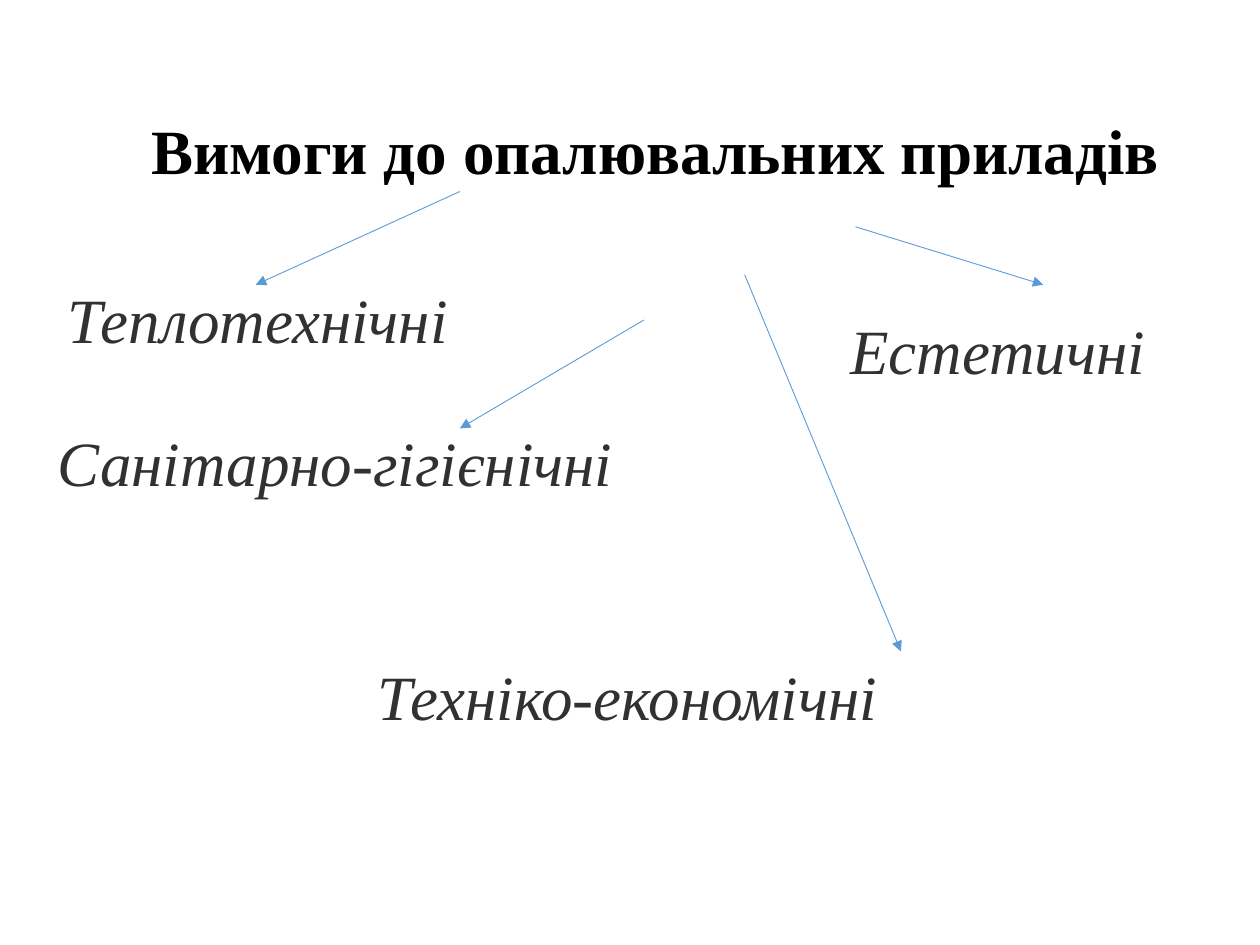
from typing import NamedTuple

import pptx
import pptx.dml.color
import pptx.enum.shapes
import pptx.enum.text
import pptx.oxml
import pptx.oxml.ns
import pptx.util
from pptx.util import Inches

BLACK = pptx.dml.color.RGBColor(0x00, 0x00, 0x00)
DARK_GREY = pptx.dml.color.RGBColor(0x31, 0x31, 0x31)
BLUE = pptx.dml.color.RGBColor(0x5B, 0x9B, 0xD5)
FONT = "Times New Roman"
TITLE_ONLY = 5
LABEL_HEIGHT = 0.71


class Requirement(NamedTuple):
    text: str
    left: float
    top: float
    width: float


class Arrow(NamedTuple):
    start: tuple[float, float]
    end: tuple[float, float]


REQUIREMENTS = [
    Requirement("Санітарно-гігієнічні", 0.36, 3.31, 4.65),
    Requirement("Теплотехнічні", 0.44, 2.18, 3.25),
    Requirement("Техніко-економічні", 2.9, 5.17, 4.21),
    Requirement("Естетичні", 6.65, 2.42, 2.57),
]
ARROWS = [
    Arrow((3.65, 1.52), (2.03, 2.26)),
    Arrow((5.11, 2.54), (3.65, 3.4)),
    Arrow((5.91, 2.18), (7.15, 5.17)),
    Arrow((6.79, 1.8), (8.28, 2.26)),
]


def write_text(box, text: str, *, color, size=36, bold=False, italic=False,
               align=pptx.enum.text.PP_ALIGN.LEFT) -> None:
    para = box.text_frame.paragraphs[0]
    para.alignment = align
    span = para.add_run()
    span.text = text
    span.font.name = FONT
    span.font.size = pptx.util.Pt(size)
    span.font.bold = bold
    span.font.italic = italic
    span.font.color.rgb = color


def add_title(page, text: str) -> None:
    title = page.shapes.title
    title.left, title.top = Inches(0.7), Inches(0.56)
    title.width, title.height = Inches(9), Inches(1.25)
    title.text_frame.vertical_anchor = pptx.enum.text.MSO_ANCHOR.MIDDLE
    write_text(title, text, color=BLACK, bold=True,
               align=pptx.enum.text.PP_ALIGN.CENTER)


def add_requirement(page, item: Requirement) -> None:
    box = page.shapes.add_textbox(Inches(item.left), Inches(item.top),
                                  Inches(item.width), Inches(LABEL_HEIGHT))
    box.text_frame.word_wrap = False
    box.text_frame.auto_size = pptx.enum.text.MSO_AUTO_SIZE.SHAPE_TO_FIT_TEXT
    write_text(box, item.text, color=DARK_GREY, italic=True)


def add_arrow(page, arrow: Arrow) -> None:
    connector = page.shapes.add_connector(
        pptx.enum.shapes.MSO_CONNECTOR.STRAIGHT,
        *map(Inches, arrow.start + arrow.end))
    connector.line.color.rgb = BLUE
    connector.line.width = pptx.util.Pt(0.5)
    properties = connector.element.spPr
    outline = properties.find(pptx.oxml.ns.qn("a:ln"))
    namespace = pptx.oxml.ns.nsdecls("a")
    outline.append(pptx.oxml.parse_xml(f'<a:tailEnd {namespace} type="triangle"/>'))
    properties.append(pptx.oxml.parse_xml(f"<a:effectLst {namespace}/>"))


def main() -> None:
    deck = pptx.Presentation()
    deck.slide_width, deck.slide_height = Inches(10), Inches(7.5)
    page = deck.slides.add_slide(deck.slide_layouts[TITLE_ONLY])
    add_title(page, "Вимоги до опалювальних приладів")
    for item in REQUIREMENTS:
        add_requirement(page, item)
    for arrow in ARROWS:
        add_arrow(page, arrow)
    deck.save("out.pptx")


if __name__ == "__main__":
    main()
